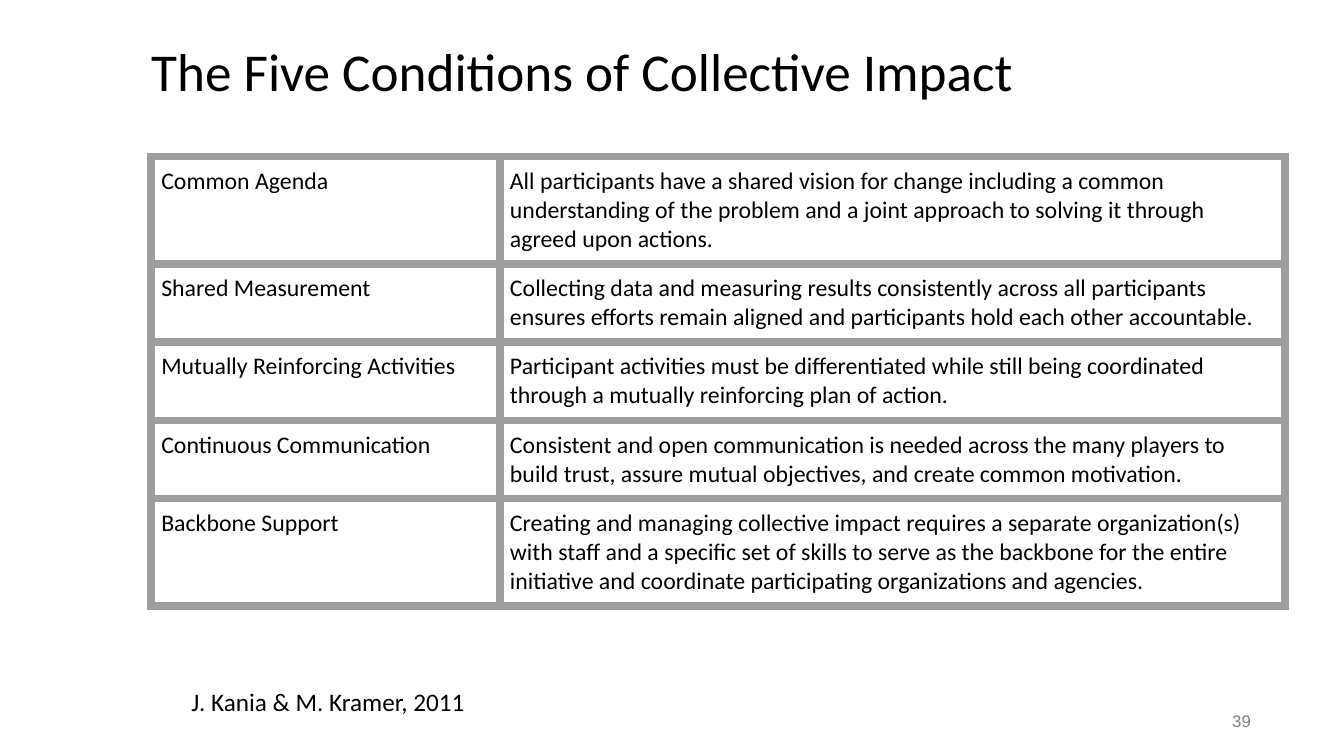
from lxml import etree
from pptx import Presentation
from pptx import util as u
from pptx.dml.color import RGBColor
from pptx.enum import text
from pptx.oxml import ns

Pt = u.Pt
THEME = {
    "ink": "000000", "grid": "9E9E9E", "muted": "7F7F7F", "paper": "FFFFFF",
    "font": "Calibri", "number_font": "Arial",
    "title": 38, "body": 17, "source": 18, "number": 12, "border": 6,
}


def write(tf, words, size, font="font", color="ink", margins=(7.2, 7.2, 7.2, 7.2)):
    tf.word_wrap = True
    tf.margin_left, tf.margin_top, tf.margin_right, tf.margin_bottom = map(Pt, margins)
    p = tf.paragraphs[0]
    p.alignment = text.PP_ALIGN.LEFT
    r = p.add_run()
    r.text = words
    r.font.size = Pt(THEME[size])
    r.font.name = THEME[font]
    r.font.color.rgb = RGBColor.from_string(THEME[color])
    return p


def add_borders(cell):
    tcPr = cell._tc.get_or_add_tcPr()
    for i, side in enumerate(("lnL", "lnR", "lnT", "lnB")):
        ln = etree.Element(ns.qn(f"a:{side}"), w=str(Pt(THEME["border"])))
        fill = etree.SubElement(ln, ns.qn("a:solidFill"))
        etree.SubElement(fill, ns.qn("a:srgbClr"), val=THEME["grid"])
        tcPr.insert(i, ln)


prs = Presentation()
prs.slide_width, prs.slide_height = Pt(960), Pt(540)
s = prs.slides.add_slide(prs.slide_layouts[5])

# Title
title = s.shapes.title
title.left, title.top, title.width, title.height = Pt(100.8), Pt(28.8), Pt(791.3), Pt(69.8)
tf = title.text_frame
tf.auto_size = text.MSO_AUTO_SIZE.NONE
tf.vertical_anchor = text.MSO_ANCHOR.TOP
p = write(tf, "The Five Conditions of Collective Impact", "title", margins=(7.2, 3.6, 7.2, 3.6))
p.line_spacing = 0.9

# Slide number
number = s.shapes.add_textbox(Pt(821.5), Pt(500.4), Pt(72), Pt(28.8))
tf = number.text_frame
tf.vertical_anchor = text.MSO_ANCHOR.MIDDLE
p = write(tf, "39", "number", "number_font", "muted", (7.2, 3.6, 0, 3.6))
p.alignment = text.PP_ALIGN.RIGHT

# Conditions table: name, description, row height
conditions = [
    ("Common Agenda",
     "All participants have a shared vision for change including a common understanding of "
     "the problem and a joint approach to solving it through agreed upon actions.", 77),
    ("Shared Measurement",
     "Collecting data and measuring results consistently across all participants ensures "
     "efforts remain aligned and participants hold each other accountable.", 55.8),
    ("Mutually Reinforcing Activities",
     "Participant activities must be differentiated while still being coordinated through "
     "a mutually reinforcing plan of action.", 55.8),
    ("Continuous Communication",
     "Consistent and open communication is needed across the many players to build trust, "
     "assure mutual objectives, and create common motivation.", 55.8),
    ("Backbone Support",
     "Creating and managing collective impact requires a separate organization(s) with staff "
     "and a specific set of skills to serve as the backbone for the entire initiative and "
     "coordinate participating organizations and agencies.", 77),
]
height = sum(row[2] for row in conditions)
table = s.shapes.add_table(len(conditions), 2, Pt(108), Pt(111.6), Pt(810), Pt(height)).table
table.first_row = table.horz_banding = False
table.columns[0].width, table.columns[1].width = Pt(249.1), Pt(560.9)
for i, (name, description, row_height) in enumerate(conditions):
    table.rows[i].height = Pt(row_height)
    for j, words in enumerate((name, description)):
        cell = table.cell(i, j)
        cell.margin_left = cell.margin_right = cell.margin_top = cell.margin_bottom = Pt(7.2)
        cell.fill.solid()
        cell.fill.fore_color.rgb = RGBColor.from_string(THEME["paper"])
        add_borders(cell)
        write(cell.text_frame, words, "body")

# Source line
source = s.shapes.add_textbox(Pt(129.6), Pt(483.1), Pt(540), Pt(31.7))
write(source.text_frame, "J. Kania & M. Kramer, 2011", "source")

prs.save("out.pptx")
